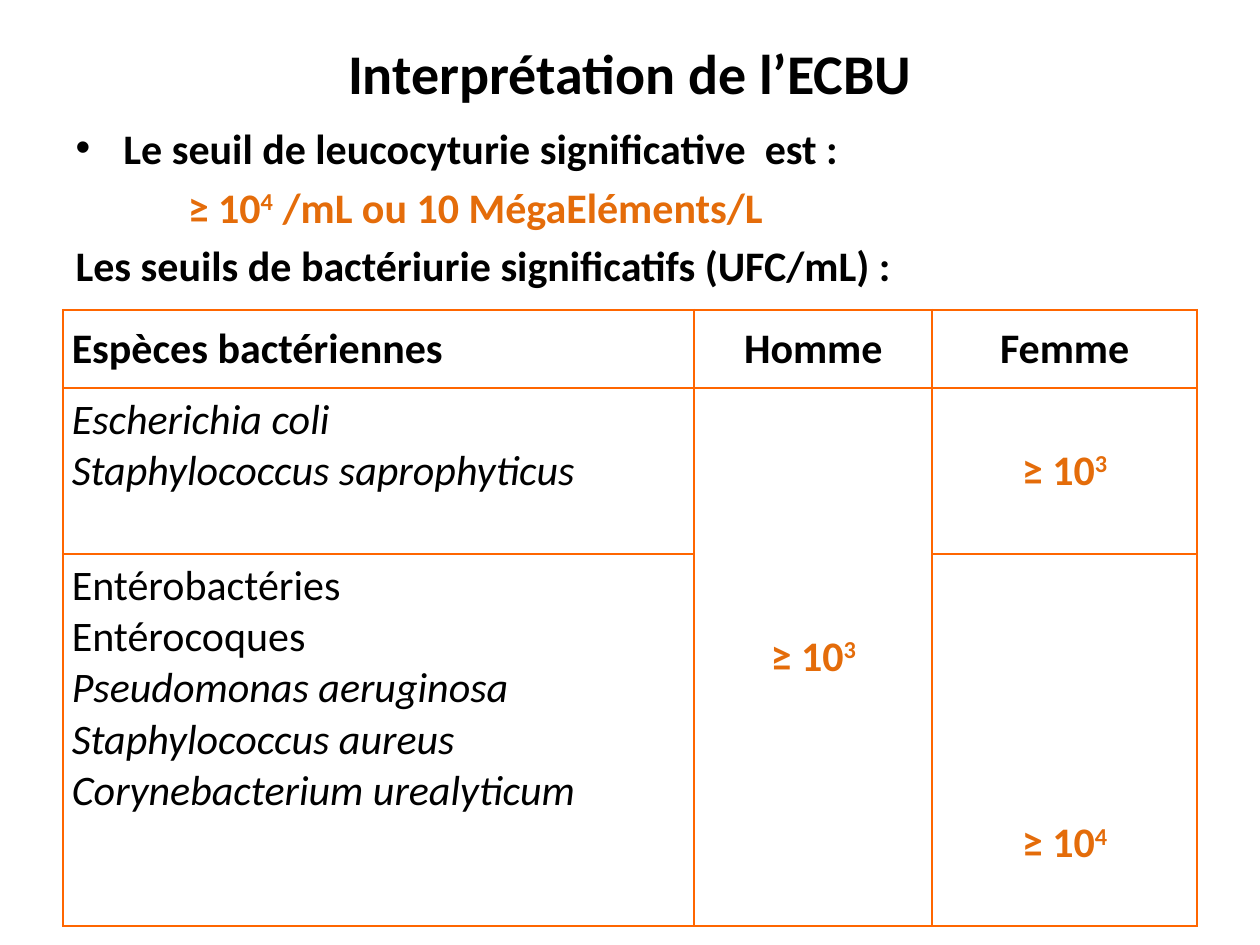
from lxml import etree
from pptx import Presentation
from pptx.dml.color import RGBColor
from pptx.enum.text import MSO_ANCHOR, MSO_AUTO_SIZE, PP_ALIGN
from pptx.oxml.ns import qn
from pptx.util import Inches, Pt

LEFT, MID, JUST = PP_ALIGN.LEFT, PP_ALIGN.CENTER, PP_ALIGN.JUSTIFY
TOP, CENTRE, LOW = MSO_ANCHOR.TOP, MSO_ANCHOR.MIDDLE, MSO_ANCHOR.BOTTOM
FONT = "Calibri"
HUES = {"ink": "000000", "mark": "E46C0A", "rule": "FF6600"}

# Content: "^" sets what follows it, up to the next space, as superscript
TITLE = "Interprétation de l’ECBU"
BODY = [  # text, hue, left margin, first-line indent, bullet
    ("Le seuil de leucocyturie significative  est :", "ink", 0.38, -0.38, "•"),
    ("≥ 10^4 /mL ou 10 MégaEléments/L", "mark", 0.89, 0, None),
    ("Les seuils de bactériurie significatifs (UFC/mL) :", "ink", 0, 0, None),
]
HEAD = ["Espèces bactériennes", "Homme", "Femme"]
GERMS = [  # name, italic
    [("Escherichia coli", True), ("Staphylococcus saprophyticus", True)],
    [("Entérobactéries", False), ("Entérocoques", False),
     ("Pseudomonas aeruginosa", True), ("Staphylococcus aureus", True),
     ("Corynebacterium urealyticum", True)],
]
LIMITS = [  # row, column, text, anchor, bottom margin
    (1, 1, "≥ 10^3", CENTRE, 0.05),
    (1, 2, "≥ 10^3", CENTRE, 0.05),
    (2, 2, "≥ 10^4", LOW, 0.45),
]

# Layout in inches
WIDE, HIGH, EDGE = 10, 7.5, 0.5
SPAN = WIDE - 2 * EDGE
COLS = [5.01, 1.89, 2.1]
ROWS = [0.62, 1.32, 2.95]


def write(para, text, size=24, hue="ink", bold=True, italic=False, align=LEFT):
    """Fill one paragraph with formatted runs."""
    para.alignment = align
    base, _, rest = text.partition("^")
    power, gap, tail = rest.partition(" ")
    for part, lift in ((base, False), (power, True), (gap + tail, False)):
        if not part:
            continue
        run = para.add_run()
        run.text = part
        font = run.font
        font.name, font.size = FONT, Pt(size)
        font.bold, font.italic = bold, italic
        font.color.rgb = RGBColor.from_string(HUES[hue])
        if lift:
            run._r.get_or_add_rPr().set("baseline", "30000")


def place(shape, top, height):
    shape.left, shape.top = Inches(EDGE), Inches(top)
    shape.width, shape.height = Inches(SPAN), Inches(height)
    shape.text_frame.word_wrap = True
    shape.text_frame.auto_size = MSO_AUTO_SIZE.NONE


def next_para(frame, index):
    return frame.add_paragraph() if index else frame.paragraphs[0]


def indent(para, left, first, mark):
    props = para._p.get_or_add_pPr()
    props.set("marL", str(Inches(left)))
    props.set("indent", str(Inches(first)))
    if mark:
        etree.SubElement(props, qn("a:buChar")).set("char", mark)
    else:
        etree.SubElement(props, qn("a:buNone"))


def frame_cell(cell):
    """Clear the fill and rule all four sides."""
    cell.fill.background()
    cell.margin_left = cell.margin_right = Inches(0.07)
    props = cell._tc.get_or_add_tcPr()
    for spot, side in enumerate(("lnL", "lnR", "lnT", "lnB")):
        line = etree.Element(qn("a:" + side), w=str(Pt(1.5)))
        fill = etree.SubElement(line, qn("a:solidFill"))
        etree.SubElement(fill, qn("a:srgbClr"), val=HUES["rule"])
        props.insert(spot, line)


deck = Presentation()
deck.slide_width, deck.slide_height = Inches(WIDE), Inches(HIGH)
slide = deck.slides.add_slide(deck.slide_layouts[1])

# Title
title = slide.shapes.title
place(title, 0.3, 0.54)
title.text_frame.vertical_anchor = CENTRE
write(title.text_frame.paragraphs[0], TITLE, size=32, align=MID)

# Body list
body = slide.placeholders[1]
place(body, 0.92, 4.95)
for i, (text, hue, left, first, mark) in enumerate(BODY):
    para = next_para(body.text_frame, i)
    para.space_before = Pt(4.8 if i else 0)
    indent(para, left, first, mark)
    write(para, text, hue=hue, align=JUST)

# Table of thresholds
table = slide.shapes.add_table(
    len(ROWS), len(COLS), Inches(EDGE), Inches(2.46),
    Inches(SPAN), Inches(sum(ROWS))).table
table.first_row = table.horz_banding = False
for col, width in zip(table.columns, COLS):
    col.width = Inches(width)
for row, height in zip(table.rows, ROWS):
    row.height = Inches(height)
for cell in table.iter_cells():
    frame_cell(cell)
table.cell(1, 1).merge(table.cell(2, 1))

for c, text in enumerate(HEAD):
    cell = table.cell(0, c)
    cell.vertical_anchor = CENTRE
    write(cell.text_frame.paragraphs[0], text, align=MID if c else LEFT)
for r, names in enumerate(GERMS, 1):
    cell = table.cell(r, 0)
    cell.vertical_anchor = TOP
    for i, (name, slant) in enumerate(names):
        write(next_para(cell.text_frame, i), name, bold=False, italic=slant)
for r, c, text, anchor, foot in LIMITS:
    cell = table.cell(r, c)
    cell.vertical_anchor, cell.margin_bottom = anchor, Inches(foot)
    write(cell.text_frame.paragraphs[0], text, hue="mark", align=MID)

deck.save("out.pptx")
